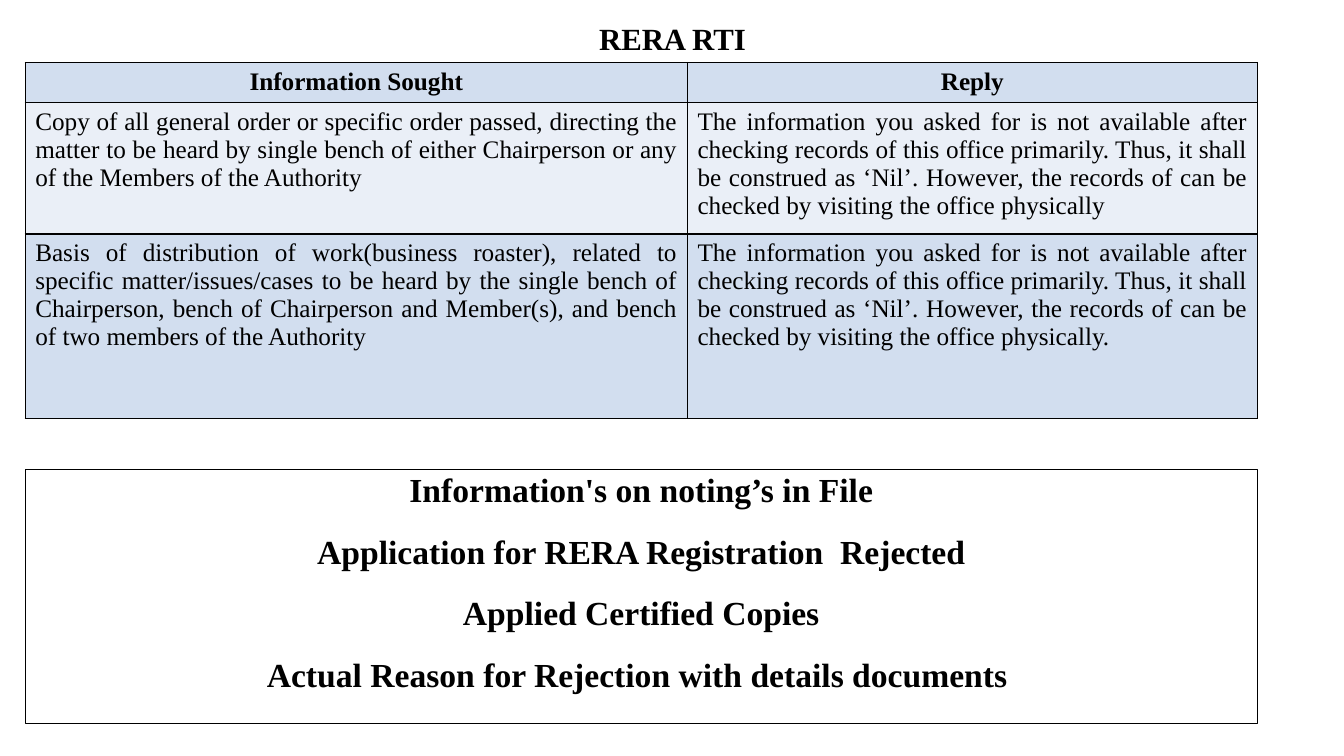
from lxml.etree import SubElement
from pptx import Presentation
from pptx.dml.color import RGBColor
from pptx.enum.shapes import MSO_SHAPE
from pptx.enum.text import MSO_ANCHOR, PP_ALIGN as Align
from pptx.oxml.ns import qn
from pptx.util import Inches, Pt

FONT = "Times New Roman"
BLACK, HEADER_BLUE, PALE_BLUE = "000000", "D2DEEF", "EAEFF7"
SLIDE_W, SLIDE_H = 13.33, 7.5
LEFT, CONTENT_W = 0.25, 12.22
COLUMN_SHARES = (0.5375, 0.4625)
ROW_HEIGHTS = (0.37, 1.28, 1.83)

TITLE = "RERA RTI"
RTI_ROWS = [
    ("Information Sought", "Reply"),
    (
        "Copy of all general order or specific order passed, directing the matter to be heard "
        "by single bench of either Chairperson or any of the Members of the Authority",
        "The information you asked for is not available after checking records of this office "
        "primarily. Thus, it shall be construed as ‘Nil’. However, the records of can be "
        "checked by visiting the office physically",
    ),
    (
        "Basis of distribution of work(business roaster), related to specific "
        "matter/issues/cases to be heard by the single bench of Chairperson, bench of "
        "Chairperson and Member(s), and bench of two members of the Authority",
        "The information you asked for is not available after checking records of this office "
        "primarily. Thus, it shall be construed as ‘Nil’. However, the records of can be "
        "checked by visiting the office physically.",
    ),
]
FILE_NOTINGS = [
    "Information's on noting’s in File",
    "Application for RERA Registration  Rejected",
    "Applied Certified Copies",
    "Actual Reason for Rejection with details documents ",
]


def color(hex_code):
    return RGBColor.from_string(hex_code)


def write(paragraph, text, size, bold=True, align=Align.CENTER):
    paragraph.alignment = align
    run = paragraph.add_run()
    run.text = text
    run.font.name = FONT
    run.font.size = Pt(size)
    run.font.bold = bold
    run.font.color.rgb = color(BLACK)


def space(paragraph, line_spacing):
    paragraph.line_spacing = line_spacing
    paragraph.space_before = Pt(10)
    paragraph.space_after = Pt(8)


def border(cell):
    properties = cell._tc.get_or_add_tcPr()
    for position, side in enumerate(("a:lnL", "a:lnR", "a:lnT", "a:lnB")):
        edge = properties.makeelement(qn(side), {"w": str(Pt(1))})
        fill = SubElement(edge, qn("a:solidFill"))
        SubElement(fill, qn("a:srgbClr"), {"val": BLACK})
        properties.insert(position, edge)


def add_title(slide, left, top, width, height):
    title = slide.shapes.add_textbox(*map(Inches, (left, top, width, height)))
    title.text_frame.word_wrap = True
    heading = title.text_frame.paragraphs[0]
    space(heading, 1.07)
    write(heading, TITLE, 22)


def add_rti_table(slide, left, top, width, height):
    table = slide.shapes.add_table(
        len(RTI_ROWS), len(COLUMN_SHARES), *map(Inches, (left, top, width, height))
    ).table
    for column, share in zip(table.columns, COLUMN_SHARES):
        column.width = Inches(width * share)
    for row, row_height in zip(table.rows, ROW_HEIGHTS):
        row.height = Inches(row_height)
    for r, texts in enumerate(RTI_ROWS):
        for c, text in enumerate(texts):
            cell = table.cell(r, c)
            cell.fill.solid()
            cell.fill.fore_color.rgb = color(PALE_BLUE if r % 2 else HEADER_BLUE)
            border(cell)
            is_header = r == 0
            align = Align.CENTER if is_header else Align.JUSTIFY
            write(cell.text_frame.paragraphs[0], text, 18, is_header, align)


def add_notings_box(slide, left, top, width, height):
    box = slide.shapes.add_shape(
        MSO_SHAPE.RECTANGLE, *map(Inches, (left, top, width, height))
    )
    box.shadow.inherit = False
    box.fill.background()
    box.line.color.rgb = color(BLACK)
    box.line.width = Pt(0.25)
    frame = box.text_frame
    frame.word_wrap = True
    frame.vertical_anchor = MSO_ANCHOR.TOP
    for index, noting in enumerate(FILE_NOTINGS):
        paragraph = frame.add_paragraph() if index else frame.paragraphs[0]
        space(paragraph, 0.9)
        write(paragraph, noting, 24)


def main():
    deck = Presentation()
    deck.slide_width, deck.slide_height = Inches(SLIDE_W), Inches(SLIDE_H)
    slide = deck.slides.add_slide(deck.slide_layouts[6])
    add_title(slide, LEFT, 0.12, 12.84, 0.5)
    add_rti_table(slide, LEFT, 0.62, CONTENT_W, sum(ROW_HEIGHTS))
    add_notings_box(slide, LEFT, 4.65, CONTENT_W, 2.52)
    deck.save("out.pptx")


if __name__ == "__main__":
    main()
